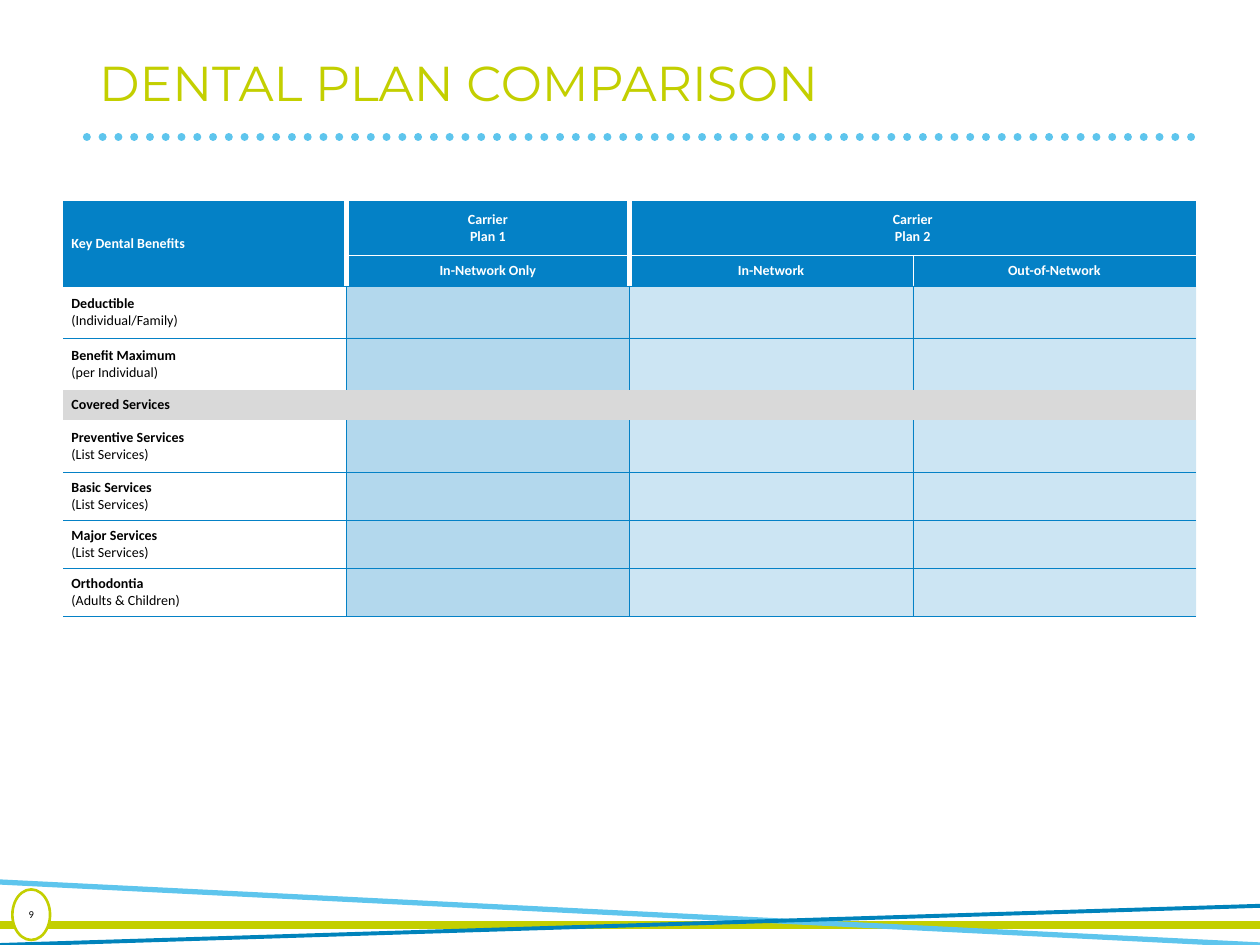
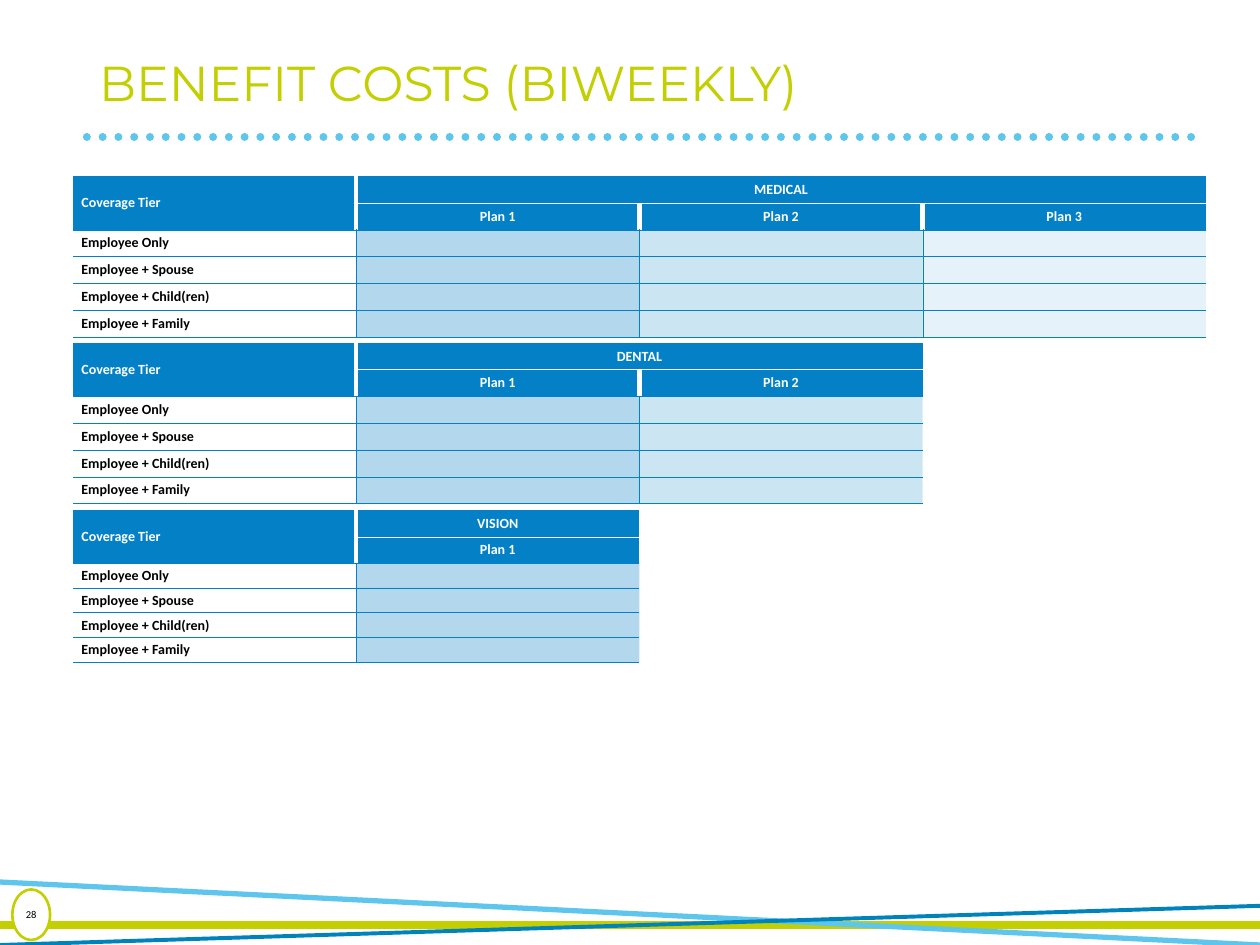
from dataclasses import dataclass
from typing import Any

from lxml import etree
from pptx import Presentation
from pptx.dml.color import RGBColor
from pptx.enum.dml import MSO_LINE
from pptx.enum.shapes import MSO_CONNECTOR, MSO_SHAPE
from pptx.enum.text import MSO_ANCHOR, PP_ALIGN
from pptx.oxml.ns import qn
from pptx.util import Cm, Pt

LINE = MSO_CONNECTOR.STRAIGHT
OVAL = MSO_SHAPE.OVAL
DOTS = MSO_LINE.ROUND_DOT
MID = MSO_ANCHOR.MIDDLE
LEFT = PP_ALIGN.LEFT
CENTER = PP_ALIGN.CENTER

BLUE = "0481C6"
NAVY = "0083BB"
SKY = "5EC5ED"
LIME = "C3CF00"
GRAY = "D9D9D9"
WHITE = "FFFFFF"
BLACK = "000000"

WIDE, HIGH = 25.4, 19.05
COL = 5.71
THIN, THICK = 0.25, 3
HEADS = 2


@dataclass(frozen=True)
class Rule:
    start: tuple[float, float]
    end: tuple[float, float]
    color: str
    width: float
    dots: bool = False


@dataclass(frozen=True)
class Grid:
    left: float
    top: float
    heights: list[float]
    groups: list[str]
    plans: list[str]
    labels: list[str]
    tints: list[int]
    bar: int = -1
    slim: int = -1


@dataclass(frozen=True)
class Page:
    title: str
    number: str
    grids: list[Grid]


RULES = [
    Rule((1.75, 2.76), (24.1, 2.76), SKY, 4.5, True),
    Rule((0, 18.64), (WIDE, 18.64), LIME, 4.5),
    Rule((WIDE, HIGH), (0, 17.78), SKY, 3),
    Rule((0, HIGH), (WIDE, 18.26), NAVY, 2.25),
]

TIERS = ["Employee Only", "Employee + Spouse", "Employee + Child(ren)", "Employee + Family"]
EVEN = [0.54] * 6


def tier_grid(top: float, kind: str, count: int, heights: list[float]) -> Grid:
    return Grid(
        1.47, top, heights,
        ["Coverage Tier", kind] + [""] * (count - 1),
        [f"Plan {n + 1}" for n in range(count)],
        TIERS, [30, 20, 10][:count],
    )


PAGES = [
    Page("DENTAL PLAN COMPARISON", "9", [
        Grid(
            1.27, 4.05, [1.09, 0.62, 1.05, 1.05, 0.61, 1.05, 0.97, 0.97, 0.97],
            ["Key Dental Benefits", "Carrier\nPlan 1", "Carrier\nPlan 2", ""],
            ["In-Network Only", "In-Network", "Out-of-Network"],
            [
                "Deductible\n(Individual/Family)",
                "Benefit Maximum\n(per Individual)",
                "Covered Services",
                "Preventive Services\n(List Services)",
                "Basic Services\n(List Services)",
                "Major Services\n(List Services)",
                "Orthodontia\n(Adults & Children)",
            ],
            [30, 20, 20], bar=4, slim=3,
        ),
    ]),
    Page("BENEFIT COSTS (BIWEEKLY)", "28", [
        tier_grid(3.55, "MEDICAL", 3, EVEN),
        tier_grid(6.91, "DENTAL", 2, EVEN),
        tier_grid(10.28, "VISION", 1, [0.54, 0.53] + [0.5] * 4),
    ]),
]


def put(item: Any, **values: Any) -> None:
    for name, value in values.items():
        setattr(item, name, value)


def hue(color: str) -> RGBColor:
    return RGBColor.from_string(color)


def paint(fill: Any, color: str) -> None:
    fill.solid()
    fill.fore_color.rgb = hue(color)


def style(para: Any, face: str, size: float, color: str, bold: bool = False) -> None:
    for run in para.runs:
        put(run.font, name=face, size=Pt(size), bold=bold)
        run.font.color.rgb = hue(color)


def pad(frame: Any, side: float, edge: float) -> None:
    put(frame, margin_left=Cm(side), margin_right=Cm(side),
        margin_top=Cm(edge), margin_bottom=Cm(edge), vertical_anchor=MID)


def draw_rule(slide: Any, rule: Rule) -> None:
    ends = [Cm(n) for n in rule.start + rule.end]
    shape = slide.shapes.add_connector(LINE, *ends)
    paint(shape.line.fill, rule.color)
    shape.line.width = Pt(rule.width)
    props = shape._element.spPr
    if rule.dots:
        shape.line.dash_style = DOTS
        props.find(qn("a:ln")).set("cap", "rnd")
    etree.SubElement(props, qn("a:effectLst"))


def draw_title(slide: Any, text: str) -> None:
    box = slide.shapes.add_textbox(Cm(1.75), Cm(1.02), Cm(21.89), Cm(1.4))
    frame = box.text_frame
    put(frame, word_wrap=True, vertical_anchor=MID, text=text)
    para = frame.paragraphs[0]
    para.line_spacing = 0.9
    style(para, "Montserrat", 28, LIME)


def draw_badge(slide: Any, text: str) -> None:
    shape = slide.shapes.add_shape(OVAL, Cm(0.25), Cm(17.93), Cm(0.76), Cm(1.02))
    shape.shadow.inherit = False
    paint(shape.fill, WHITE)
    paint(shape.line.fill, LIME)
    shape.line.width = Pt(1.5)
    frame = shape.text_frame
    pad(frame, 0, 0)
    frame.text = text
    para = frame.paragraphs[0]
    para.alignment = CENTER
    style(para, "Calibri", 6, BLACK)


def upright(grid: Grid, rows: list[list[str]], row: int, col: int) -> tuple[str, float] | None:
    if col in (0, len(grid.groups)) or row == grid.bar:
        return None
    if row >= HEADS:
        return BLUE, THIN
    if not rows[row][col]:
        return None
    return WHITE, THIN if row and col == grid.slim else THICK


def level(grid: Grid, row: int, col: int) -> tuple[str, float] | None:
    if row == 0 or grid.bar in (row, row - 1):
        return None
    return WHITE if row == 1 and col else BLUE, THIN


def edge(cell: Any, side: str, look: tuple[str, float] | None) -> None:
    props = cell._tc.get_or_add_tcPr()
    line = etree.SubElement(props, qn(f"a:ln{side}"))
    if look is None:
        etree.SubElement(line, qn("a:noFill"))
        return
    color, width = look
    line.set("w", str(Pt(width)))
    fill = etree.SubElement(line, qn("a:solidFill"))
    etree.SubElement(fill, qn("a:srgbClr"), val=color)


def shade(cell: Any, grid: Grid, row: int, col: int) -> None:
    if row < HEADS:
        paint(cell.fill, BLUE)
    elif row == grid.bar:
        paint(cell.fill, GRAY)
    elif col == 0:
        paint(cell.fill, WHITE)
    else:
        paint(cell.fill, BLUE)
        tone = cell._tc.tcPr.find(".//" + qn("a:solidFill") + "/" + qn("a:srgbClr"))
        for node in cell._tc.tcPr.findall(qn("a:solidFill")):
            tone = node.find(qn("a:srgbClr"))
        etree.SubElement(tone, qn("a:alpha"), val=str(grid.tints[col - 1] * 1000))


def write(cell: Any, text: str, row: int, col: int) -> None:
    head = row < HEADS
    pad(cell, 0.17, 0.09 if head else 0.08)
    cell.text = text
    for spot, para in enumerate(cell.text_frame.paragraphs):
        para.alignment = CENTER if col else LEFT
        style(para, "Calibri", 8, WHITE if head else BLACK, head or spot == 0)
        if not text:
            etree.SubElement(para._p, qn("a:endParaRPr"), sz="800")


def join(table: Any, grid: Grid) -> None:
    last = len(grid.groups) - 1
    table.cell(0, 0).merge(table.cell(1, 0))
    if grid.bar >= 0:
        table.cell(grid.bar, 0).merge(table.cell(grid.bar, last))
    starts = [col for col, text in enumerate(grid.groups) if text]
    for start, stop in zip(starts, starts[1:] + [last + 1]):
        if stop - start > 1:
            table.cell(0, start).merge(table.cell(0, stop - 1))


def draw_grid(slide: Any, grid: Grid) -> None:
    count = len(grid.groups)
    body = [[label] + [""] * (count - 1) for label in grid.labels]
    rows = [grid.groups, [""] + grid.plans] + body
    frame = slide.shapes.add_table(
        len(rows), count, Cm(grid.left), Cm(grid.top),
        Cm(COL * count), Cm(sum(grid.heights)),
    )
    table = frame.table
    put(table, first_row=False, horz_banding=False)
    for column in table.columns:
        column.width = Cm(COL)
    for band, height in zip(table.rows, grid.heights):
        band.height = Cm(height)
    for row, texts in enumerate(rows):
        for col, text in enumerate(texts):
            cell = table.cell(row, col)
            write(cell, text, row, col)
            edge(cell, "L", upright(grid, rows, row, col))
            edge(cell, "R", upright(grid, rows, row, col + 1))
            edge(cell, "T", level(grid, row, col))
            edge(cell, "B", level(grid, row + 1, col))
            shade(cell, grid, row, col)
    join(table, grid)


def main() -> None:
    deck = Presentation()
    put(deck, slide_width=Cm(WIDE), slide_height=Cm(HIGH))
    for page in PAGES:
        slide = deck.slides.add_slide(deck.slide_layouts[6])
        for rule in RULES:
            draw_rule(slide, rule)
        draw_title(slide, page.title)
        draw_badge(slide, page.number)
        for grid in page.grids:
            draw_grid(slide, grid)
    deck.save("out.pptx")


if __name__ == "__main__":
    main()
